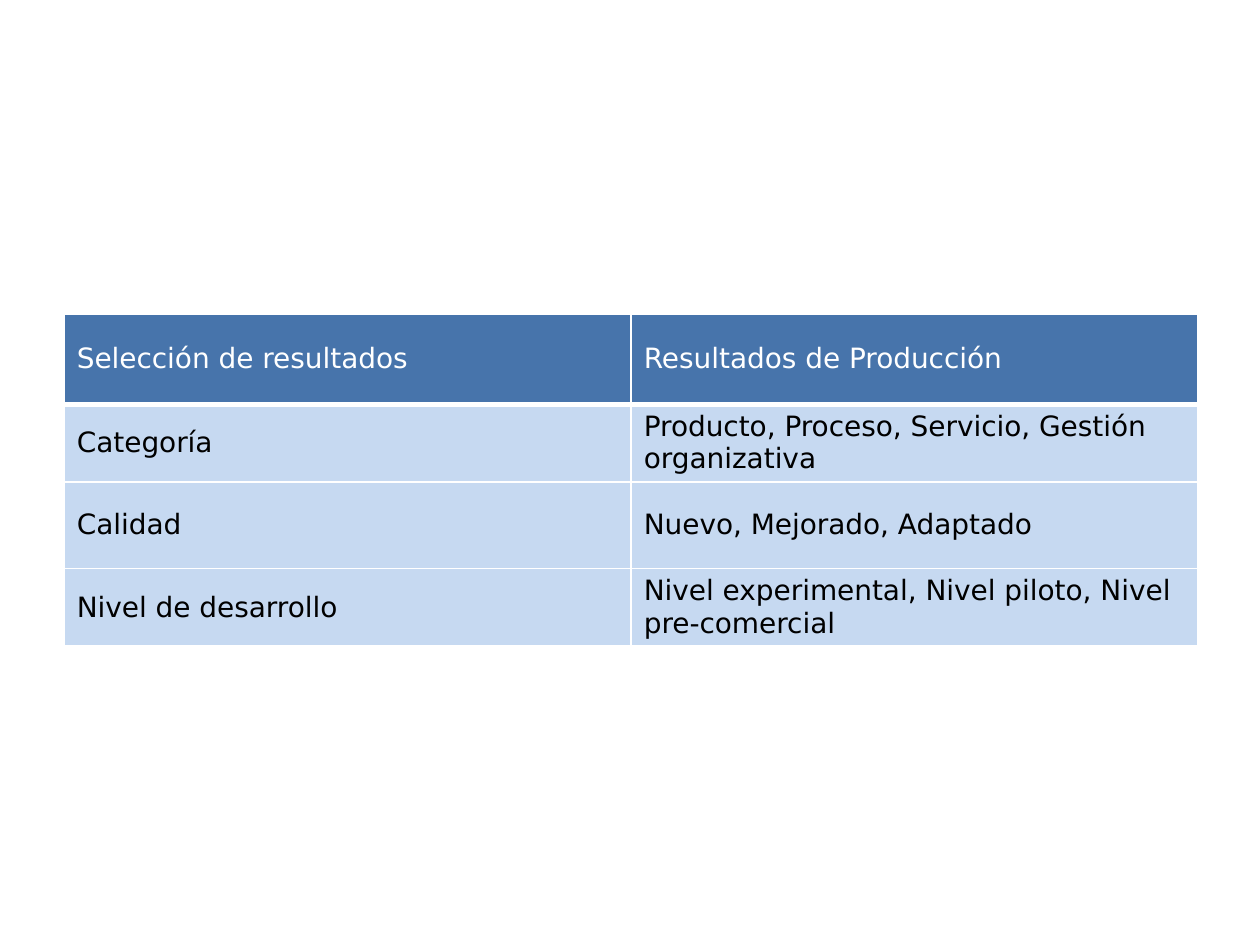
"""Build a slide with a table of production results."""
import pptx
import pptx.dml.color
import pptx.enum.text
import pptx.oxml.ns
import pptx.util
from lxml import etree
from pptx.util import Inches

COLORS = {"header": "4774AB", "body": "C6D9F1", "white": "FFFFFF", "black": "000000"}
FONT = "DejaVu Sans"
ROWS = [
    ("Selección de resultados", "Resultados de Producción"),
    ("Categoría", "Producto, Proceso, Servicio, Gestión organizativa"),
    ("Calidad", "Nuevo, Mejorado, Adaptado"),
    ("Nivel de desarrollo", "Nivel experimental, Nivel piloto, Nivel pre-comercial"),
]
HEIGHTS = [0.72, 0.41, 0.69, 0.41]


def rgb(name):
    return pptx.dml.color.RGBColor.from_string(COLORS[name])


def add_border(cell, side, width):
    qn = pptx.oxml.ns.qn
    tcPr = cell._tc.get_or_add_tcPr()
    ln = etree.SubElement(tcPr, qn(f"a:ln{side}"), w=str(pptx.util.Pt(width)))
    fill = etree.SubElement(ln, qn("a:solidFill"))
    etree.SubElement(fill, qn("a:srgbClr"), val=COLORS["white"])


prs = pptx.Presentation()
prs.slide_width, prs.slide_height = Inches(10), Inches(7.5)
s = prs.slides.add_slide(prs.slide_layouts[6])

frame = s.shapes.add_table(len(ROWS), 2, Inches(0.51), Inches(2.49), Inches(9), Inches(2.68))
table = frame.table
table.horz_banding = False
for row, height in zip(table.rows, HEIGHTS):
    row.height = Inches(height)

for i, texts in enumerate(ROWS):
    header = i == 0
    for j, text in enumerate(texts):
        cell = table.cell(i, j)
        for side in "LRTB":
            add_border(cell, side, 3 if header and side == "B" else 1)
        cell.fill.solid()
        cell.fill.fore_color.rgb = rgb("header" if header else "body")
        cell.vertical_anchor = pptx.enum.text.MSO_ANCHOR.MIDDLE
        r = cell.text_frame.paragraphs[0].add_run()
        r.text = text
        r.font.name = FONT
        r.font.size = pptx.util.Pt(16)
        r.font.bold = False
        r.font.color.rgb = rgb("white" if header else "black")

prs.save("out.pptx")
